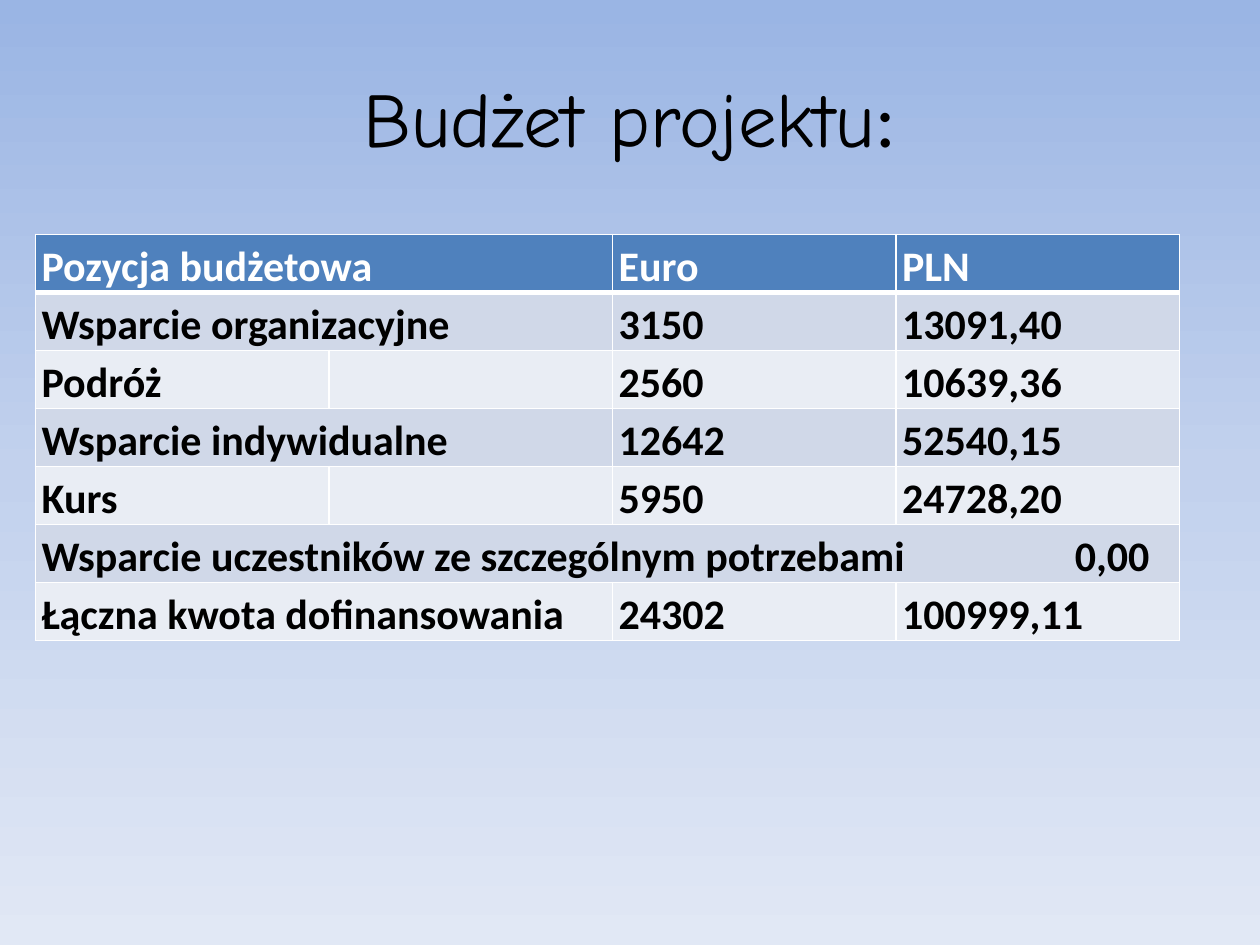
from copy import deepcopy

from pptx import Presentation
from pptx.dml.color import RGBColor
from pptx.enum.text import MSO_ANCHOR as Anchor, PP_ALIGN as Align
from pptx.oxml import parse_xml
from pptx.oxml.ns import nsdecls, qn
from pptx.util import Inches, Pt

WIDE, HIGH = Inches(10), Inches(7.5)
BLACK = RGBColor(0, 0, 0)
WHITE = RGBColor(255, 255, 255)
HEAD = RGBColor(0x4F, 0x81, 0xBD)
BANDS = RGBColor(0xE9, 0xED, 0xF4), RGBColor(0xD0, 0xD8, 0xE8)
SKY = (
    (0, RGBColor(0x9A, 0xB5, 0xE4)),
    (0.5, RGBColor(0xC2, 0xD1, 0xED)),
    (1, RGBColor(0xE1, 0xE8, 0xF5)),
)
COLS = 2.33, 2.25, 2.25, 2.25
ROW = 0.46
TAB = 8.2  # inches from the text edge to the amount in a full-width row

# Each row: the number of columns its label spans, then its texts.
ROWS = (
    (2, "Pozycja budżetowa", "Euro", "PLN"),
    (2, "Wsparcie organizacyjne", "3150", "13091,40"),
    (1, "Podróż", "", "2560", "10639,36"),
    (2, "Wsparcie indywidualne", "12642", "52540,15"),
    (1, "Kurs", "", "5950", "24728,20"),
    (4, "Wsparcie uczestników ze szczególnym potrzebami\t0,00"),
    (2, "Łączna kwota dofinansowania", "24302", "100999,11"),
)


def paint_back(slide):
    fill = slide.background.fill
    fill.gradient()
    fill.gradient_angle = 270
    stops = slide.element.find(".//" + qn("a:gsLst"))
    stops.insert(1, deepcopy(stops[0]))
    for stop, (pos, color) in zip(fill.gradient_stops, SKY):
        stop.position = pos
        stop.color.rgb = color


def add_title(slide):
    box = slide.shapes.add_textbox(
        int(WIDE * 0.05), int(HIGH * 0.04), int(WIDE * 0.9), Inches(1.25))
    frame = box.text_frame
    frame.word_wrap = True
    frame.vertical_anchor = Anchor.MIDDLE
    para = frame.paragraphs[0]
    para.alignment = Align.CENTER
    para.font.size = Pt(44)
    para.font.color.rgb = BLACK
    for text, face in (("Budżet projektu", "Comic Neue"), (":", "Calibri")):
        run = para.add_run()
        run.text = text
        run.font.name = face


def add_edges(cell, base):
    """Draw white cell borders, with the bottom one base points wide."""
    props = cell._tc.get_or_add_tcPr()
    for spot, (side, width) in enumerate(zip("LRTB", (1, 1, 1, base))):
        props.insert(spot, parse_xml(
            f'<a:ln{side} {nsdecls("a")} w="{Pt(width)}"><a:solidFill>'
            f'<a:srgbClr val="{WHITE}"/></a:solidFill></a:ln{side}>'))


def set_tab(para):
    para._p.get_or_add_pPr().append(parse_xml(
        f'<a:tabLst {nsdecls("a")}>'
        f'<a:tab pos="{Inches(TAB)}" algn="l"/></a:tabLst>'))


def write_cell(cell, text, color):
    cell.vertical_anchor = Anchor.BOTTOM
    cell.margin_left = cell.margin_right = Inches(0.05)
    cell.margin_top = cell.margin_bottom = 0
    cell.text = text
    para = cell.text_frame.paragraphs[0]
    para.line_spacing = 1.15
    if "\t" in text:
        set_tab(para)
    font = para.font
    font.name = "Calibri"
    font.size = Pt(24)
    font.bold = True
    font.color.rgb = color


def add_budget(slide):
    table = slide.shapes.add_table(
        len(ROWS), len(COLS), Inches(0.28), Inches(1.86),
        Inches(sum(COLS)), Inches(ROW * len(ROWS))).table
    for col, width in zip(table.columns, COLS):
        col.width = Inches(width)
    for r, (span, label, *rest) in enumerate(ROWS):
        table.rows[r].height = Inches(ROW)
        for cell in table.rows[r].cells:
            cell.fill.solid()
            cell.fill.fore_color.rgb = BANDS[r % 2] if r else HEAD
            add_edges(cell, 1 if r else 3)
        if span > 1:
            table.cell(r, 0).merge(table.cell(r, span - 1))
        spots = 0, *range(span, len(COLS))
        for c, text in zip(spots, (label, *rest)):
            write_cell(table.cell(r, c), text, BLACK if r else WHITE)


def main():
    deck = Presentation()
    deck.slide_width, deck.slide_height = WIDE, HIGH
    slide = deck.slides.add_slide(deck.slide_layouts[6])
    paint_back(slide)
    add_title(slide)
    add_budget(slide)
    deck.save("out.pptx")


if __name__ == "__main__":
    main()
